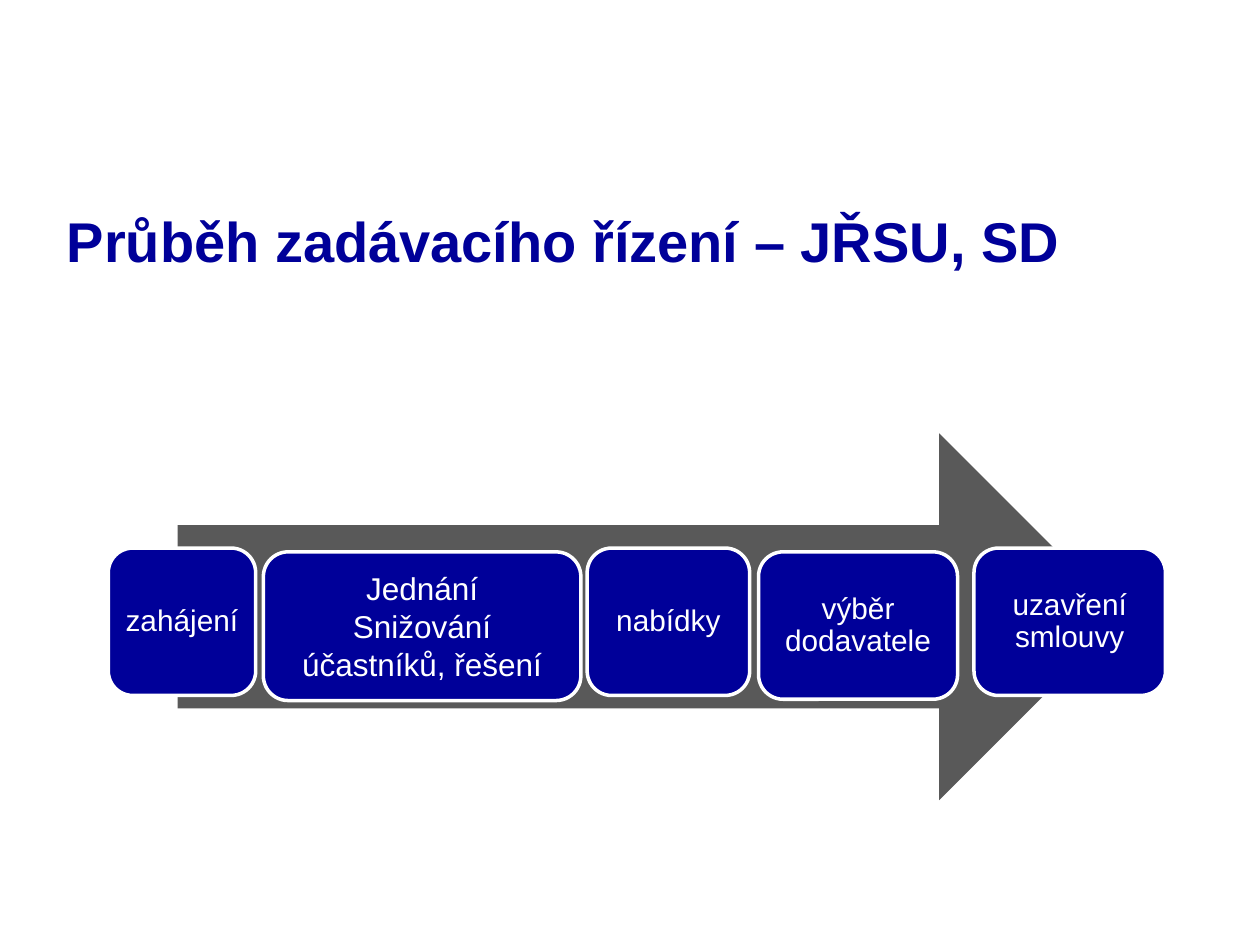
from dataclasses import dataclass
from pptx import Presentation
from pptx.dml.color import RGBColor as Rgb
from pptx.enum.shapes import MSO_SHAPE as Kind
from pptx.enum.text import MSO_ANCHOR as Anchor, MSO_AUTO_SIZE as Fit, PP_ALIGN as Align
from pptx.util import Inches, Pt

WIDE, HIGH = Inches(10), Inches(7.5)
NAVY, GREY, WHITE = "000099", "595959", "FFFFFF"


@dataclass
class Area:
    left: float
    top: float
    width: float
    height: float

    def place(self) -> tuple[int, ...]:
        sides = (self.left, self.top, self.width, self.height)
        return tuple(int(part * full / 100) for part, full in zip(sides, (WIDE, HIGH) * 2))


@dataclass
class Step:
    lines: list[str]
    area: Area
    size: int = 17
    inset: float = 0.07
    space: float = 0.9


def shade(code: str) -> Rgb:
    return Rgb.from_string(code)


def write(para, text: str, size: int, hue: str, bold: bool = False) -> None:
    run = para.add_run()
    run.text = text
    font = run.font
    font.name, font.size, font.bold = "Arial", Pt(size), bold
    font.color.rgb = shade(hue)


def draw(slide, kind, area: Area, hue: str):
    shape = slide.shapes.add_shape(kind, *area.place())
    shape.shadow.inherit = False
    shape.fill.solid()
    shape.fill.fore_color.rgb = shade(hue)
    shape.line.fill.background()
    return shape


def add_step(slide, step: Step) -> None:
    shape = draw(slide, Kind.ROUNDED_RECTANGLE, step.area, NAVY)
    shape.line.color.rgb = shade(WHITE)
    shape.line.width = Pt(2)
    frame = shape.text_frame
    frame.word_wrap = True
    frame.vertical_anchor = Anchor.MIDDLE
    frame.margin_left = frame.margin_right = Inches(step.inset)
    frame.margin_top = frame.margin_bottom = Inches(step.inset)
    for row, text in enumerate(step.lines):
        para = frame.add_paragraph() if row else frame.paragraphs[0]
        para.alignment = Align.CENTER
        para.line_spacing = step.space
        write(para, text, step.size, WHITE)


def add_title(slide, text: str, area: Area) -> None:
    title = slide.shapes.title
    title.left, title.top, title.width, title.height = area.place()
    frame = title.text_frame
    frame.auto_size = Fit.NONE
    frame.word_wrap = True
    frame.vertical_anchor = Anchor.TOP
    frame.margin_top, frame.margin_bottom = Inches(0.09), 0
    para = frame.paragraphs[0]
    para.alignment = Align.LEFT
    write(para, text, 32, NAVY, True)


def main() -> None:
    deck = Presentation()
    deck.slide_width, deck.slide_height = WIDE, HIGH
    slide = deck.slides.add_slide(deck.slide_layouts[5])
    add_title(slide, "Průběh zadávacího řízení – JŘSU, SD", Area(4.3, 20.67, 90.7, 7.33))
    draw(slide, Kind.RIGHT_ARROW, Area(14.1, 45.87, 75, 38.8), GREY)
    high, low, tall = 58, 58.4, 15.6
    steps = [
        Step(["zahájení"], Area(8.6, high, 11.7, tall)),
        Step(["nabídky"], Area(46.6, high, 12.9, tall)),
        Step(["výběr dodavatele"], Area(60.2, low, 15.8, tall)),
        Step(["uzavření smlouvy"], Area(77.3, high, 15.2, tall)),
        Step(["Jednání", "Snižování účastníků, řešení"],
             Area(20.9, low, 25.2, 15.73), 18, 0.1, 1.0),
    ]
    for step in steps:
        add_step(slide, step)
    deck.save("out.pptx")


if __name__ == "__main__":
    main()
